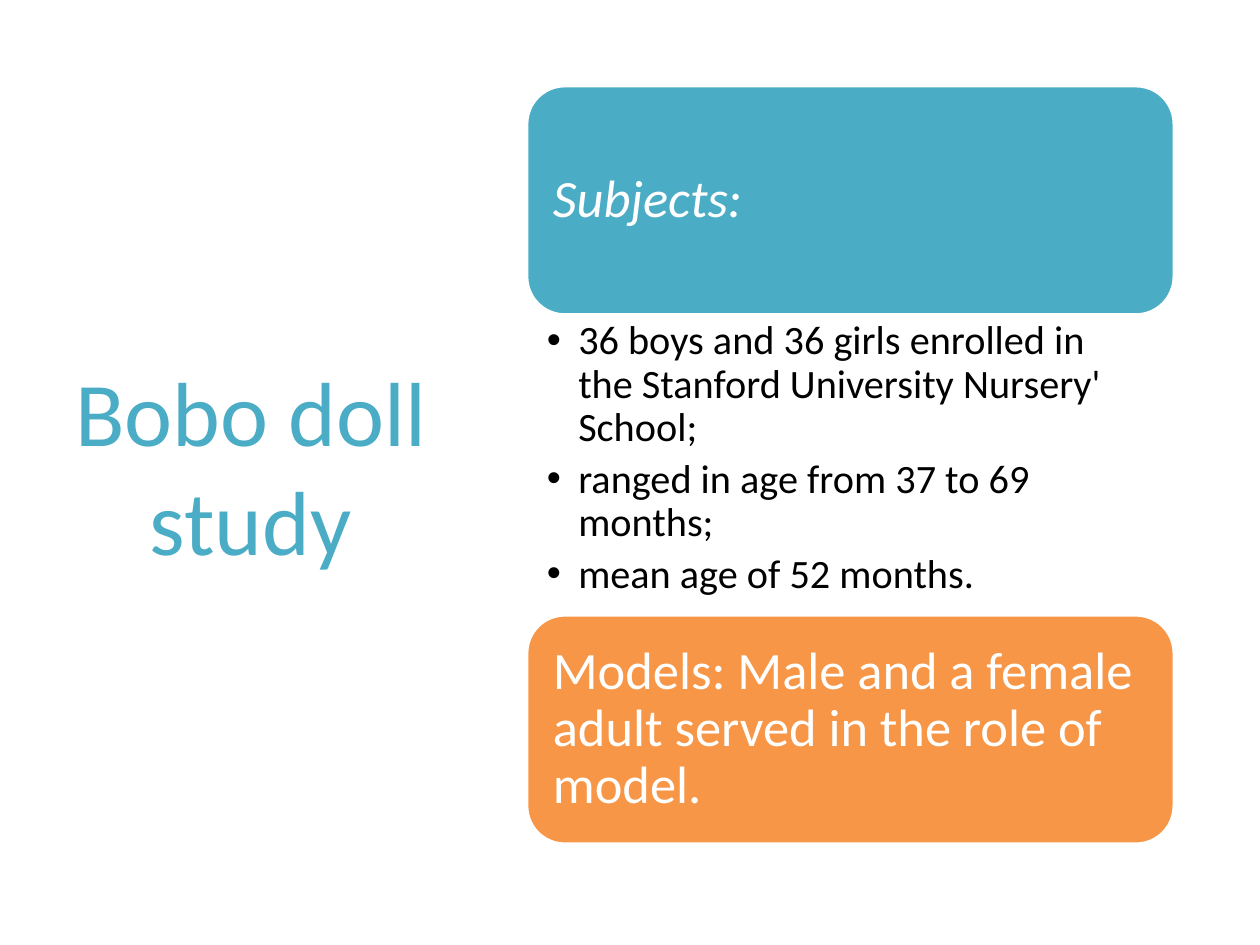
from lxml import etree
from pptx import Presentation
from pptx import util as u
from pptx.dml.color import RGBColor
from pptx.enum import shapes, text
from pptx.oxml.ns import qn

TEAL = RGBColor(0x4B, 0xAC, 0xC6)
ORANGE = RGBColor(0xF7, 0x96, 0x46)
WHITE = RGBColor(0xFF, 0xFF, 0xFF)
BLACK = RGBColor(0x00, 0x00, 0x00)
FONT = "Calibri"

TOP, HEIGHT = 0.68, 6.02
TITLE_BOX = (0.43, TOP, 3.12, HEIGHT)
CONTENT_BOX = (4.18, TOP, 5.14, HEIGHT)
CARD_HEIGHT = 1.82

SUBJECTS = [
    "36 boys and 36 girls enrolled in the Stanford University Nursery' School;",
    "ranged in age from 37 to 69 months;",
    "mean age of 52 months.",
]


def place(shape, box):
    shape.left, shape.top, shape.width, shape.height = map(u.Inches, box)


def set_insets(frame, left, top, right, bottom):
    frame.margin_left, frame.margin_top = u.Inches(left), u.Inches(top)
    frame.margin_right, frame.margin_bottom = u.Inches(right), u.Inches(bottom)
    frame.word_wrap = True


def write(paragraph, words, size, color, alignment=text.PP_ALIGN.LEFT, italic=False):
    paragraph.alignment = alignment
    run = paragraph.add_run()
    run.text = words
    run.font.name = FONT
    run.font.size = u.Pt(size)
    run.font.italic = italic
    run.font.color.rgb = color


def add_bullet(paragraph, indent):
    properties = paragraph._p.get_or_add_pPr()
    properties.set("marL", str(u.Inches(indent)))
    properties.set("indent", str(-u.Inches(indent)))
    etree.SubElement(properties, qn("a:buFont")).set("typeface", "Arial")
    etree.SubElement(properties, qn("a:buChar")).set("char", "•")


def add_title(slide, box, words):
    title = slide.shapes.title
    place(title, box)
    frame = title.text_frame
    frame.word_wrap = True
    frame.vertical_anchor = text.MSO_ANCHOR.MIDDLE
    write(frame.paragraphs[0], words, 52, TEAL, text.PP_ALIGN.CENTER)


def add_card(slide, box, words, color, italic=False):
    card = slide.shapes.add_shape(
        shapes.MSO_SHAPE.ROUNDED_RECTANGLE, *map(u.Inches, box))
    card.shadow.inherit = False
    card.fill.solid()
    card.fill.fore_color.rgb = color
    card.line.color.rgb = WHITE
    card.line.width = u.Pt(2)
    frame = card.text_frame
    set_insets(frame, 0.12, 0.12, 0.12, 0.12)
    frame.vertical_anchor = text.MSO_ANCHOR.MIDDLE
    paragraph = frame.paragraphs[0]
    paragraph.line_spacing = 0.9
    write(paragraph, words, 30, WHITE, italic=italic)


def add_bullets(slide, box, items):
    frame = slide.shapes.add_textbox(*map(u.Inches, box)).text_frame
    set_insets(frame, 0.16, 0.04, 0.23, 0.04)
    for index, item in enumerate(items):
        paragraph = frame.add_paragraph() if index else frame.paragraphs[0]
        paragraph.line_spacing = 0.9
        paragraph.space_after = u.Pt(4.6)
        add_bullet(paragraph, 0.25)
        write(paragraph, item, 23, BLACK)


def add_content(slide, box):
    left, top, width, height = box
    list_height = height - 2 * CARD_HEIGHT
    list_top = top + CARD_HEIGHT
    add_card(slide, (left, top, width, CARD_HEIGHT), "Subjects:", TEAL, italic=True)
    add_bullets(slide, (left, list_top, width, list_height), SUBJECTS)
    add_card(slide, (left, list_top + list_height, width, CARD_HEIGHT),
             "Models: Male and a female adult served in the role of model.", ORANGE)


def main():
    presentation = Presentation()
    presentation.slide_width = u.Inches(10)
    presentation.slide_height = u.Inches(7.5)
    slide = presentation.slides.add_slide(presentation.slide_layouts[5])
    add_title(slide, TITLE_BOX, "Bobo doll study")
    add_content(slide, CONTENT_BOX)
    presentation.save("out.pptx")


if __name__ == "__main__":
    main()
